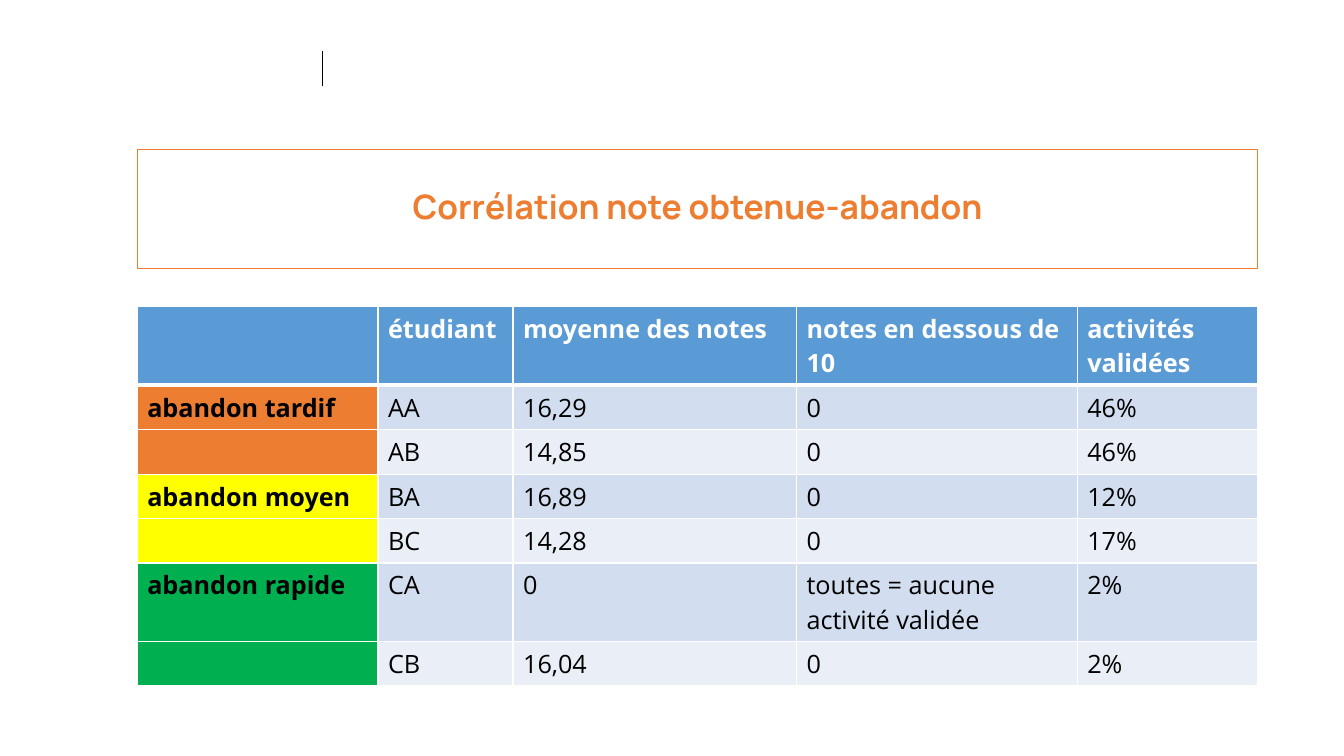
from dataclasses import dataclass

from lxml import etree
from pptx import Presentation
from pptx.dml.color import RGBColor
from pptx.enum import shapes, text
from pptx.oxml import ns
from pptx.util import Pt


@dataclass(frozen=True)
class Theme:
    """Colours, fonts and type sizes of the slide."""
    white: str = "FFFFFF"
    black: str = "000000"
    accent: str = "ED7D31"
    head: str = "5B9BD5"
    bands: tuple = ("D2DEEF", "EAEFF7")
    groups: tuple = ("ED7D31", "FFFF00", "00B050")
    display: str = "Manrope"
    body: str = "Open Sans"
    large: float = 24
    normal: float = 18


THEME = Theme()
HEADS = ("", "étudiant", "moyenne des notes", "notes en dessous de 10",
         "activités validées")
ROWS = (
    ("abandon tardif", "AA", "16,29", "0", "46%"),
    ("", "AB", "14,85", "0", "46%"),
    ("abandon moyen", "BA", "16,89", "0", "12%"),
    ("", "BC", "14,28", "0", "17%"),
    ("abandon rapide", "CA", "0", "toutes = aucune activité validée", "2%"),
    ("", "CB", "16,04", "0", "2%"),
)
WIDTHS = (172, 96.5, 202.5, 200.5, 129)


def rgb(code):
    """Turn a hex code into a colour."""
    return RGBColor.from_string(code)


def write(para, words, color, **style):
    """Add a run to a paragraph in the given font style."""
    run = para.add_run()
    run.text = words
    for key, value in style.items():
        setattr(run.font, key, value)
    run.font.color.rgb = rgb(color)


def edge(cell, sides):
    """Draw white cell borders from a dict of side and width."""
    props = cell._tc.get_or_add_tcPr()
    for spot, (side, width) in enumerate(sides.items()):
        line = etree.Element(ns.qn(f"a:ln{side}"), w=str(Pt(width)))
        fill = etree.SubElement(line, ns.qn("a:solidFill"))
        etree.SubElement(fill, ns.qn("a:srgbClr"), val=THEME.white)
        props.insert(spot, line)


def add_mark(slide, left, top, height):
    """Draw the thin upright line above the title."""
    mark = slide.shapes.add_connector(
        shapes.MSO_CONNECTOR.STRAIGHT,
        Pt(left), Pt(top), Pt(left), Pt(top + height))
    mark.line.width = Pt(0.5)
    mark.line.color.rgb = rgb(THEME.black)
    etree.SubElement(mark._element.spPr, ns.qn("a:effectLst"))


def add_title(slide, left, top, width, height):
    """Draw the framed title."""
    frame = slide.shapes.add_shape(
        shapes.MSO_SHAPE.RECTANGLE, Pt(left), Pt(top), Pt(width), Pt(height))
    frame.shadow.inherit = False
    frame.fill.background()
    frame.line.width = Pt(0.75)
    frame.line.color.rgb = rgb(THEME.accent)
    frame.text_frame.word_wrap = True
    frame.text_frame.vertical_anchor = text.MSO_ANCHOR.MIDDLE
    para = frame.text_frame.paragraphs[0]
    for key, value in {"alignment": text.PP_ALIGN.CENTER,
                       "line_spacing": 0.9}.items():
        setattr(para, key, value)
    write(para, "Corrélation note obtenue-abandon", THEME.accent,
          name=THEME.display, size=Pt(THEME.large), bold=True)


def add_grades(slide, left, top, widths, height):
    """Draw the table of grades by dropout group."""
    data = (HEADS,) + ROWS
    table = slide.shapes.add_table(
        len(data), len(widths), Pt(left), Pt(top),
        Pt(sum(widths)), Pt(height * len(data))).table
    for col, width in zip(table.columns, widths):
        col.width = Pt(width)
    for r, row in enumerate(data):
        table.rows[r].height = Pt(height)
        for c, words in enumerate(row):
            cell = table.cell(r, c)
            if r == 0:
                fill = THEME.head
            elif c == 0:
                fill = THEME.groups[(r - 1) // 2]
            else:
                fill = THEME.bands[(r - 1) % 2]
            cell.fill.solid()
            cell.fill.fore_color.rgb = rgb(fill)
            edge(cell, {"L": 1, "R": 1, "T": 3 if r == 1 else 1,
                        "B": 3 if r == 0 else 1})
            if words:
                write(cell.text_frame.paragraphs[0], words,
                      THEME.black if r else THEME.white, name=THEME.body,
                      size=Pt(THEME.normal), bold=r == 0 or c == 0)


def main():
    """Build and save the slide."""
    deck = Presentation()
    deck.slide_width, deck.slide_height = Pt(960), Pt(540)
    slide = deck.slides.add_slide(deck.slide_layouts[6])
    left = 98
    add_mark(slide, 230, 36.5, 25)
    add_title(slide, left, 106.5, sum(WIDTHS), 85)
    add_grades(slide, left, 219, WIDTHS, 29.2)
    deck.save("out.pptx")


if __name__ == "__main__":
    main()
